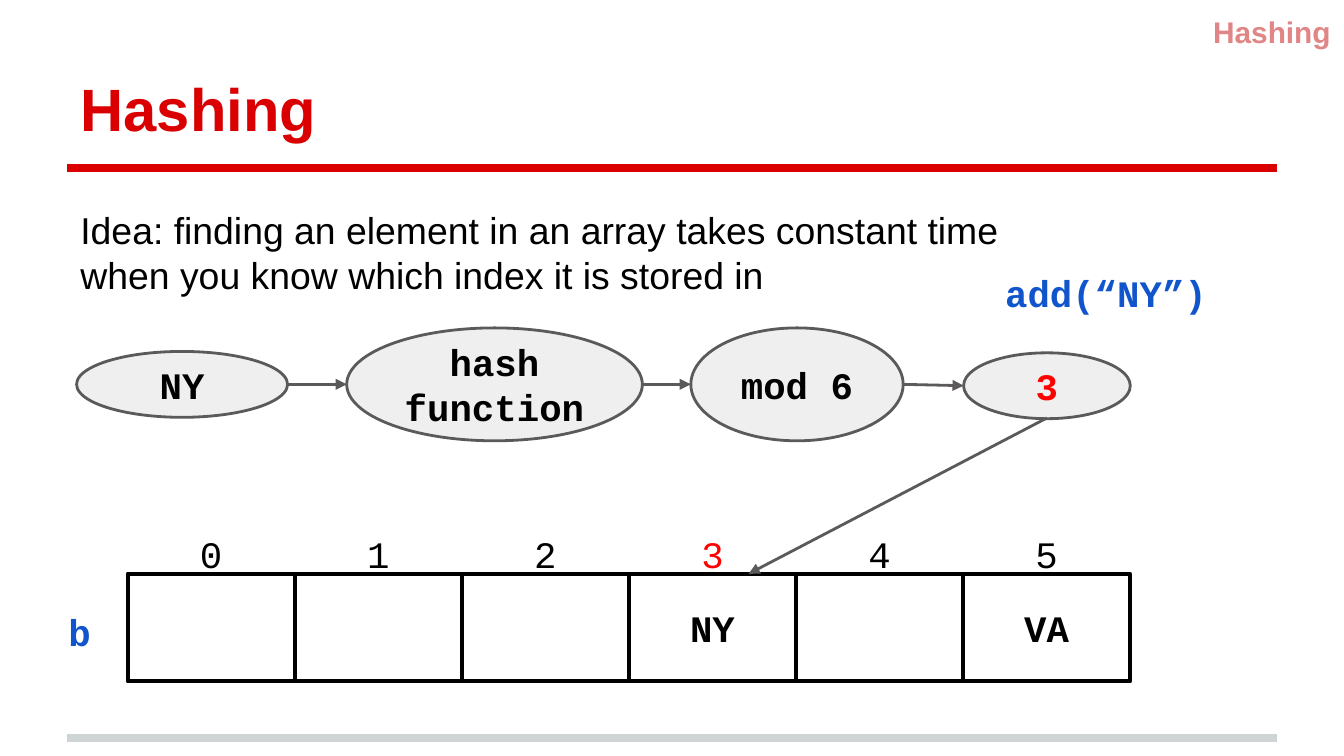
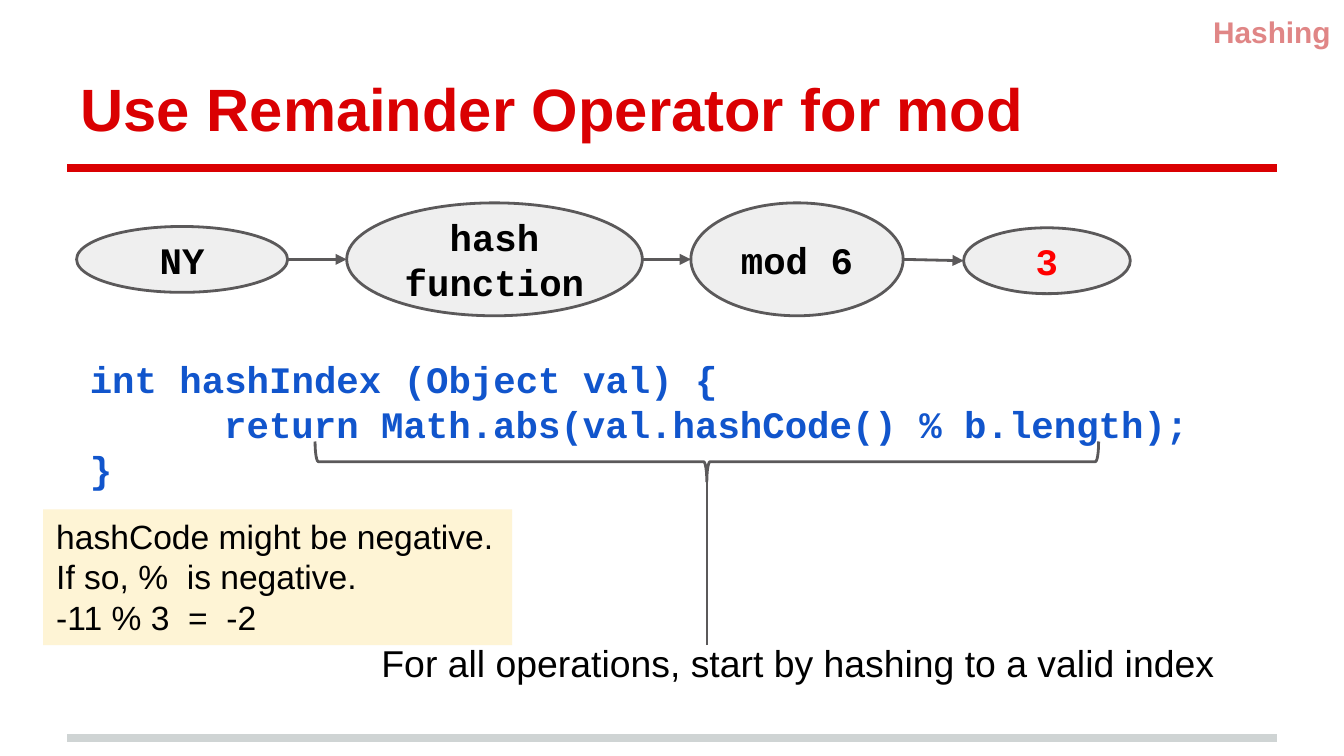
"""Build two slides on hashing a key to an array index."""
from lxml.etree import SubElement
from pptx import Presentation
from pptx.dml.color import RGBColor
from pptx.enum.shapes import MSO_CONNECTOR as Link, MSO_SHAPE as Shape
from pptx.enum.text import MSO_ANCHOR as Anchor, MSO_AUTO_SIZE as Fit, PP_ALIGN as Align
from pptx.oxml.ns import qn
from pptx.util import Pt

PX = 9144
SANS, MONO = "Arial", "Courier New"
BLACK, RED, HOT, BLUE = "000000", "DA0002", "FF0000", "1155CC"
PINK, GREY, PALE, CREAM, RULE = "E08686", "5B595A", "EFEFEF", "FEF4D5", "CFD4D4"

TOPIC = "Hashing"
RULES = [(549, RULE), (125, RED)]
HEAD = dict(size=Pt(32), bold=True, name=SANS)
TAG = dict(size=Pt(16), bold=True, name=SANS)
BODY = dict(size=Pt(20), name=SANS)
NOTE = dict(size=Pt(18), name=SANS)
CODE = dict(size=Pt(20), bold=True, name=MONO)
INDEX = dict(size=Pt(20), name=MONO)

STEPS = [
    ("NY", 57, 157, 49, 0, BLACK),
    ("hash function", 258, 220, 84, 0, BLACK),
    ("mod 6", 514, 158, 84, 0, BLACK),
    ("3", 717, 124, 49, 1, HOT),
]
CELLS = ["", "", "", "NY", "", "VA"]
HIT = 3
ROW = dict(left=95, top=427, wide=746, high=80)
IDEA = "Idea: finding an element in an array takes constant time when you know which index it is stored in"
LINES = [
    "int hashIndex (Object val) {",
    "return Math.abs(val.hashCode() % b.length);",
    "}",
]
WARN = ["hashCode might be negative.", "If so, %  is negative.", "-11 % 3  =  -2"]
MORAL = "For all operations, start by hashing to a valid index"


def px(*vals):
    """Turn px lengths into EMU."""
    return [round(v * PX) for v in vals]


def rgb(code):
    """Turn a hex string into a colour."""
    return RGBColor.from_string(code)


def write(item, lines, font, color=BLACK, align=Align.LEFT, anchor=Anchor.TOP, pad=10):
    """Fill the text frame of an item and format it."""
    frame = item.text_frame
    look = dict(word_wrap=True, auto_size=Fit.NONE, vertical_anchor=anchor,
                margin_left=10 * PX, margin_right=10 * PX,
                margin_top=pad * PX, margin_bottom=pad * PX)
    for key, val in look.items():
        setattr(frame, key, val)
    for i, line in enumerate(lines):
        para = frame.add_paragraph() if i else frame.paragraphs[0]
        para.alignment = align
        run = para.add_run()
        run.text = line
        for key, val in font.items():
            setattr(run.font, key, val)
        run.font.color.rgb = rgb(color)
    return frame


def label(shapes, box, lines, font, **look):
    """Add a text box."""
    return write(shapes.add_textbox(*px(*box)), lines, font, **look)


def draw(shapes, kind, box, fill=None, edge=None, width=1.5):
    """Add a preset shape without a shadow."""
    item = shapes.add_shape(kind, *px(*box))
    item.shadow.inherit = False
    if fill:
        item.fill.solid()
        item.fill.fore_color.rgb = rgb(fill)
    else:
        item.fill.background()
    if edge:
        item.line.color.rgb = rgb(edge)
        item.line.width = Pt(width)
    else:
        item.line.fill.background()
    return item


def join(shapes, ends, color=GREY, width=1.5, arrow=True):
    """Add a straight line, with an arrowhead if asked."""
    item = shapes.add_connector(Link.STRAIGHT, *px(*ends))
    item.line.color.rgb = rgb(color)
    item.line.width = Pt(width)
    if arrow:
        SubElement(item.line._get_or_add_ln(), qn("a:tailEnd"), type="triangle")
    SubElement(item._element.spPr, qn("a:effectLst"))


def start(deck, title):
    """Add a slide with its rules, title and topic tag."""
    slide = deck.slides.add_slide(deck.slide_layouts[5])
    shapes = slide.shapes
    for y, color in RULES:
        join(shapes, (50, y, 950, y), color, 4, False)
    head = shapes.title
    head.left, head.top, head.width, head.height = px(50, 23, 900, 94)
    write(head, [title], HEAD, RED, anchor=Anchor.BOTTOM)
    label(shapes, (766, 0, 234, 40), [TOPIC], TAG, color=PINK, align=Align.RIGHT)
    return shapes


def flow(shapes, mid):
    """Draw the steps centred on one height, with arrows between."""
    last = None
    for text, left, wide, high, drop, color in STEPS:
        y = mid + drop
        oval = draw(shapes, Shape.OVAL, (left, y - high / 2, wide, high), PALE, GREY)
        write(oval, [text], CODE, color, Align.CENTER, Anchor.MIDDLE)
        if last:
            join(shapes, (*last, left, y))
        last = left + wide, y


def array(shapes):
    """Draw the array cells with their indices above."""
    group = shapes.add_group_shape().shapes
    step = ROW["wide"] / len(CELLS)
    for i, text in enumerate(CELLS):
        x = ROW["left"] + i * step
        cell = draw(group, Shape.RECTANGLE, (x, ROW["top"], step, ROW["high"]), None, BLACK, 2.25)
        if text:
            write(cell, [text], CODE, BLACK, Align.CENTER, Anchor.MIDDLE)
        label(group, (x, ROW["top"] - 28, step, 25), [str(i)], INDEX,
              color=HOT if i == HIT else BLACK, align=Align.CENTER, anchor=Anchor.MIDDLE)


def idea(deck):
    """Build the slide that stores a key in the array."""
    shapes = start(deck, "Hashing")
    label(shapes, (50, 144, 713, 89), [IDEA], BODY)
    flow(shapes, 286)
    array(shapes)
    label(shapes, (738, 191, 189, 53), ["add(“NY”)"], CODE, color=BLUE)
    label(shapes, (41, 443, 50, 53), ["b"], CODE, color=BLUE)
    join(shapes, (779, 311, 557, 427))


def code(deck):
    """Build the slide that computes the index."""
    shapes = start(deck, "Use Remainder Operator for mod")
    card = draw(shapes, Shape.RECTANGLE, (32, 379, 349, 101), CREAM)
    frame = write(card, WARN, NOTE, pad=5)
    frame.word_wrap, frame.auto_size = False, Fit.SHAPE_TO_FIT_TEXT
    frame = label(shapes, (57, 218, 893, 194), LINES, CODE, color=BLUE, anchor=Anchor.MIDDLE)
    inner = frame.paragraphs[1]._p.get_or_add_pPr()
    inner.set("marL", str(100 * PX))
    inner.set("indent", "0")
    join(shapes, (526, 480, 526, 359), arrow=False)
    label(shapes, (274, 466, 656, 49), [MORAL], BODY)
    brace = draw(shapes, Shape.LEFT_BRACE, (511, 52, 30, 583), None, GREY)
    brace.rotation = 270
    brace.adjustments[0], brace.adjustments[1] = 0.08, 0.5
    flow(shapes, 193)


def main():
    """Build and save the deck."""
    deck = Presentation()
    deck.slide_width, deck.slide_height = px(1000, 562.5)
    idea(deck)
    code(deck)
    deck.save("out.pptx")


if __name__ == "__main__":
    main()
